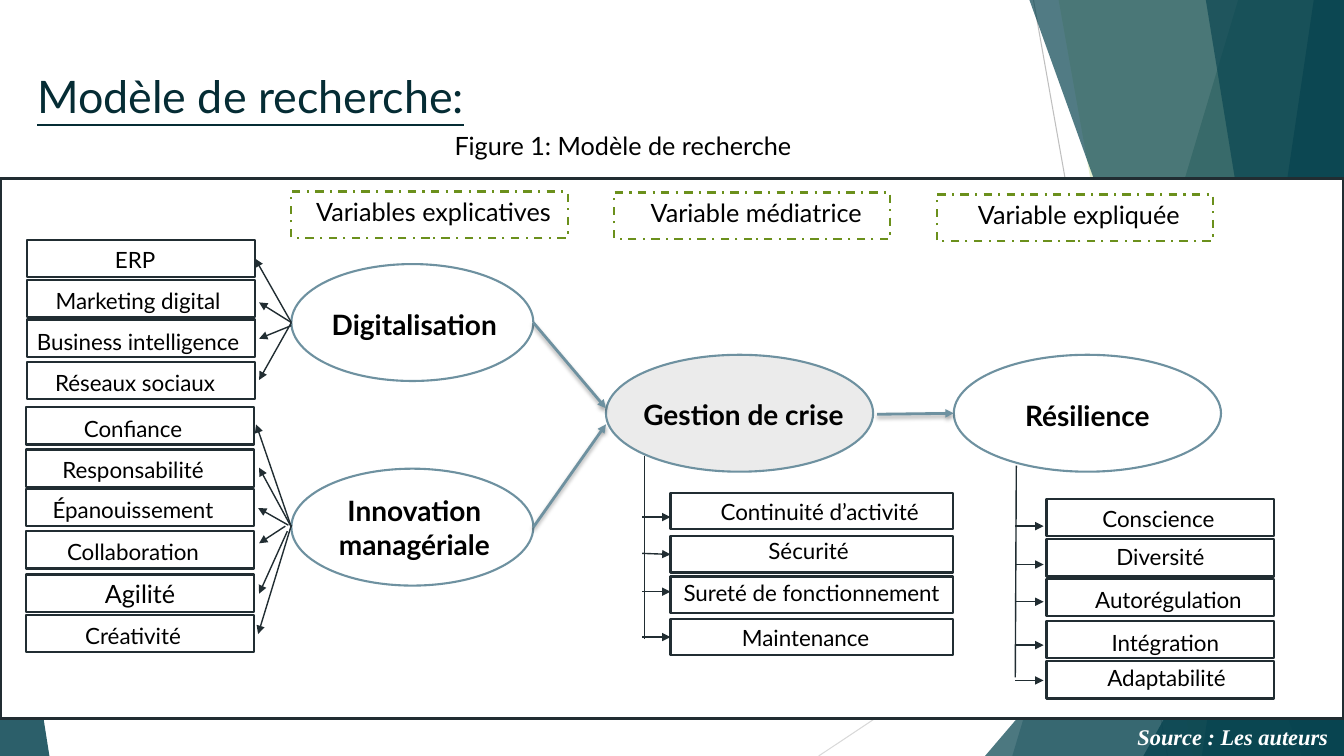
"""Builds the research model slide: explanatory, mediating and explained variables."""
import pptx
import pptx.util
import pptx.dml.color
import pptx.enum.dml
import pptx.enum.shapes
import pptx.enum.text
import pptx.oxml
import pptx.oxml.ns

PX = 9144
HUE = {"teal": "084450", "lime": "90C226", "ink": "212D32", "blue": "6E91A0",
       "olive": "6B901C", "title": "052C34", "grey": "EBEBEB", "rule": "BFBFBF",
       "pale": "D9D9D9", "white": "FFFFFF", "black": "000000"}
RGB = {name: pptx.dml.color.RGBColor.from_string(code) for name, code in HUE.items()}
KIND = pptx.enum.shapes.MSO_SHAPE
ALIGN = pptx.enum.text.PP_ALIGN
MIDDLE = pptx.enum.text.MSO_ANCHOR.MIDDLE
NS = pptx.oxml.ns.nsdecls("a")

deck = pptx.Presentation()
deck.slide_width, deck.slide_height = 1333 * PX, 750 * PX
slide = deck.slides.add_slide(deck.slide_layouts[6])
shapes = slide.shapes


def write(shape, text, size=16, color="black", font="Lato", align=ALIGN.CENTER,
          bold=False, italic=False, under=False, wrap=True, shift=None):
    frame = shape.text_frame
    frame.word_wrap = wrap
    if shift:
        dx, dy = shift
        frame.vertical_anchor = MIDDLE
        frame.margin_left, frame.margin_right = max(2 * dx, 0) * PX, max(-2 * dx, 0) * PX
        frame.margin_top, frame.margin_bottom = max(2 * dy, 0) * PX, max(-2 * dy, 0) * PX
    para = frame.paragraphs[0]
    para.alignment = align
    run = para.add_run()
    run.text = text
    run.font.name, run.font.size = font, pptx.util.Pt(size)
    run.font.bold, run.font.italic, run.font.underline = bold, italic, under
    run.font.color.rgb = RGB[color]


def link(start, end, color="ink", width=1, arrow=True, shadow=False):
    line = shapes.add_connector(pptx.enum.shapes.MSO_CONNECTOR.STRAIGHT,
                                *[n * PX for n in start + end])
    line.line.color.rgb = RGB[color]
    line.line.width = pptx.util.Pt(width)
    if arrow:
        line.line._get_or_add_ln().append(
            pptx.oxml.parse_xml(f'<a:tailEnd {NS} type="triangle"/>'))
    effect = ('<a:outerShdw blurRad="38100" dist="25400" dir="5400000" rotWithShape="0">'
              f'<a:srgbClr val="{HUE["black"]}"><a:alpha val="35000"/></a:srgbClr>'
              '</a:outerShdw>') if shadow else ""
    line._element.spPr.append(
        pptx.oxml.parse_xml(f'<a:effectLst {NS}>{effect}</a:effectLst>'))
    return line


link((1025, 0), (1158, 750), "rule", 0.75, arrow=False)
link((1333, 403), (812, 750), "pale", 0.75, arrow=False)

facets = [
    ([(1228, 0), (1333, 0), (1333, 750), (1004, 750)], "teal", 30),
    ([(1050, 0), (1333, 0), (1333, 750), (1183, 750)], "lime", 20),
    ([(1333, 333), (1333, 750), (977, 750)], "teal", 72),
    ([(1021, 0), (1333, 0), (1333, 750), (1291, 750)], "teal", 70),
    ([(1303, 0), (1333, 0), (1333, 750), (1192, 750)], "teal", 70),
    ([(1196, 0), (1333, 0), (1333, 750), (1318, 750)], "teal", 65),
    ([(1333, 393), (1333, 750), (1134, 750)], "teal", 80),
    ([(0, 439), (49, 750), (0, 750)], "teal", 85),
]
for points, color, solid in facets:
    if len(points) == 3:
        left, top = min(x for x, y in points), min(y for x, y in points)
        wide = max(x for x, y in points) - left
        facet = shapes.add_shape(KIND.ISOSCELES_TRIANGLE, left * PX, top * PX,
                                 wide * PX, (750 - top) * PX)
        facet.adjustments[0] = (points[0][0] - left) / wide
    else:
        outline = shapes.build_freeform(*points[0], scale=PX)
        outline.add_line_segments(points[1:], close=True)
        facet = outline.convert_to_shape()
    facet.shadow.inherit = False
    facet.fill.solid()
    facet.fill.fore_color.rgb = RGB[color]
    facet.line.fill.background()
    tint = facet._element.spPr.find(".//" + pptx.oxml.ns.qn("a:srgbClr"))
    tint.append(pptx.oxml.parse_xml(f'<a:alpha {NS} val="{solid * 1000}"/>'))

labels = [
    ((27, 63, 940, 91), "Modèle de recherche:",
     dict(size=32, color="title", align=ALIGN.LEFT, under=True)),
    ((999, 713, 328, 37), "Source : Les auteurs",
     dict(color="white", font="Times New Roman", align=ALIGN.RIGHT, bold=True, italic=True)),
    ((441, 124, 397, 40), "Figure 1: Modèle de recherche", dict(size=18, align=ALIGN.LEFT)),
]
for place, text, style in labels:
    write(shapes.add_textbox(*[n * PX for n in place]), text, **style)

nodes = [("", KIND.RECTANGLE, (0, 177, 1333, 536), "white", "ink", 2.25, {})]
for text, x, y, w, fill, shift in [
        ("Digitalisation", 289, 262, 240, "white", (2, 2)),
        ("Innovation managériale", 289, 465, 240, "white", (2, 0)),
        ("Gestion de crise", 601, 352, 265, "grey", (4, 1)),
        ("Résilience", 946, 352, 265, "white", (0, 2))]:
    nodes.append((text, KIND.OVAL, (x, y, w, 116), fill, "blue", 1.5,
                  dict(size=20, bold=True, shift=shift, wrap=text.startswith("Innov"))))

groups = [
    (27, 226, 37, [("ERP", 238, -6, 1), ("Marketing digital", 278, -3, 2),
                   ("Business intelligence", 317, -3, 3), ("Réseaux sociaux", 359, -6, 2)]),
    (26, 226, 37, [("Confiance", 404, -7, 3), ("Responsabilité", 446, -7, 1),
                   ("Épanouissement", 485, -7, 2), ("Collaboration", 527, -7, 2),
                   ("Agilité", 570, 0, 0), ("Créativité", 610, -7, 2)]),
    (665, 280, 36, [("Continuité d’activité", 489, 8, 1), ("Sécurité", 532, -3, -4),
                    ("Sureté de fonctionnement", 572, 0, -2), ("Maintenance", 614, -6, 1)]),
    (1038, 226, 37, [("Conscience", 495, -2, 1), ("Diversité", 535, 0, -1),
                     ("Autorégulation", 574, 8, 2), ("Intégration", 616, 5, 3),
                     ("Adaptabilité", 656, 6, -2)]),
]
for x, w, h, rows in groups:
    for text, y, dx, dy in rows:
        size = 18 if text == "Agilité" else 16
        nodes.append((text, KIND.RECTANGLE, (x, y, w, h), None, "ink", 1.5,
                      dict(size=size, shift=(dx, dy))))
for text, x, y in [("Variables explicatives", 289, 190), ("Variable médiatrice", 609, 191),
                   ("Variable expliquée", 929, 193)]:
    nodes.append((text, KIND.RECTANGLE, (x, y, 274, 46), None, "olive", 1.5,
                  dict(size=18, shift=(4, -3))))

made = {}
for text, kind, place, fill, edge, width, style in nodes:
    node = shapes.add_shape(kind, *[n * PX for n in place])
    node.shadow.inherit = False
    if fill:
        node.fill.solid()
        node.fill.fore_color.rgb = RGB[fill]
    else:
        node.fill.background()
    node.line.color.rgb = RGB[edge]
    node.line.width = pptx.util.Pt(width)
    if edge == "olive":
        node.line.dash_style = pptx.enum.dml.MSO_LINE.DASH_DOT
    if text:
        write(node, text, **style)
        made[text] = node

for start, end in [((529, 320), (601, 405)), ((529, 523), (601, 421)), ((870, 411), (946, 410))]:
    link(start, end, "blue", 2, shadow=True)

fans = [((289, 320), (253, 256)), ((289, 320), (257, 300)), ((289, 323), (257, 336)),
        ((289, 320), (257, 377)), ((289, 523), (254, 421)), ((289, 523), (257, 464)),
        ((286, 521), (256, 504)), ((283, 522), (257, 539)), ((285, 527), (257, 589)),
        ((289, 521), (256, 629))]
joins = {(253, 256): ("ERP", 3), (665, 549): ("Sécurité", 1), (665, 632): ("Maintenance", 1)}
stubs = [((637, y), (665, y)) for y in (513, 549, 587, 632)]
stubs += [((1007, y), (1035, y)) for y in (522, 560, 597, 640, 675)]
for start, end in fans + stubs:
    line = link(start, end)
    if end in joins:
        name, side = joins[end]
        line.end_connect(made[name], side)

link((639, 452), (639, 634), arrow=False)
link((1008, 462), (1007, 672), arrow=False)

deck.save("out.pptx")
